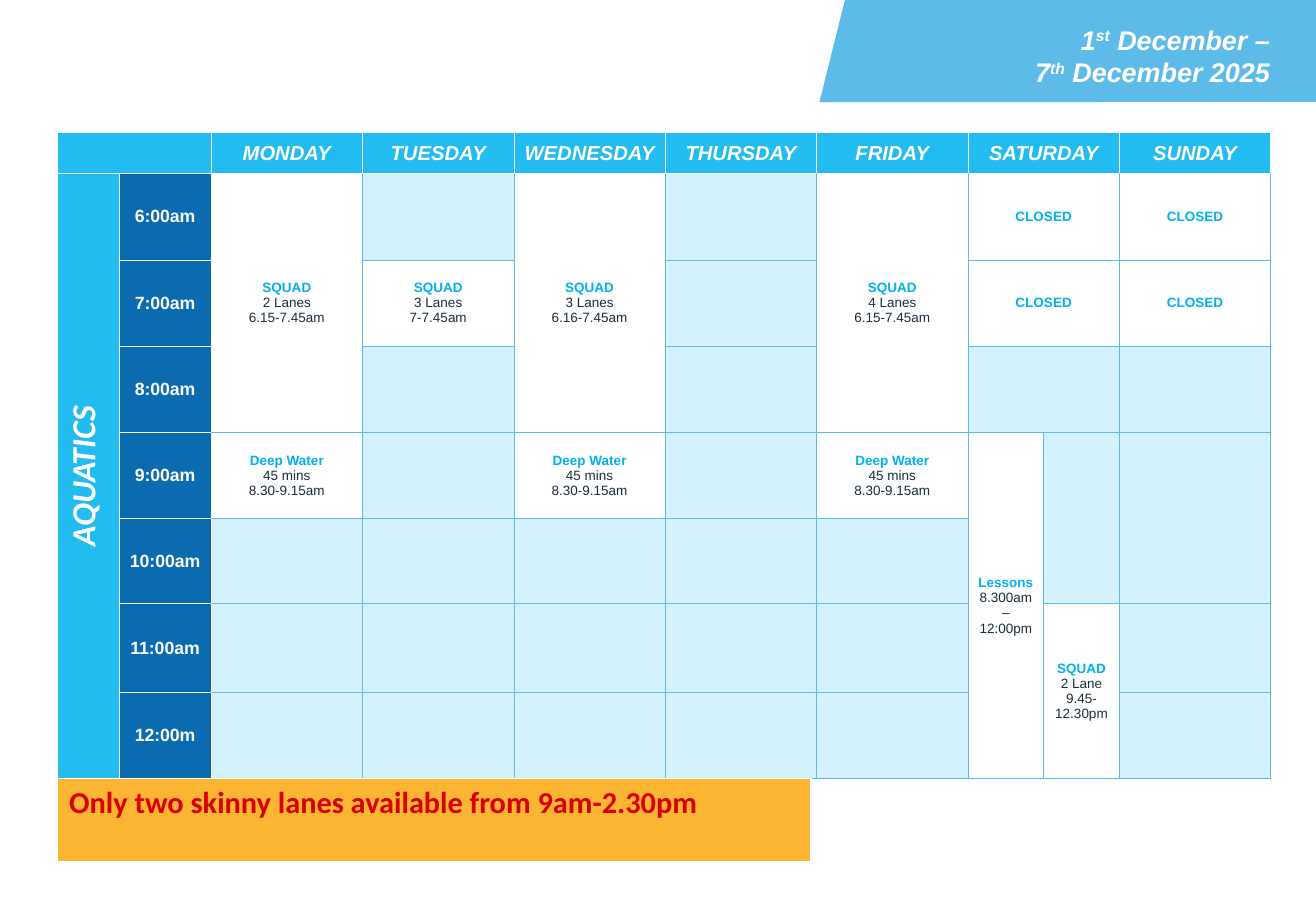
import pptx
import pptx.util
import pptx.dml.color
import pptx.enum.shapes
import pptx.enum.text
from lxml import etree

RGB = pptx.dml.color.RGBColor
ALIGN = pptx.enum.text.PP_ALIGN
ANCHOR = pptx.enum.text.MSO_ANCHOR
SHAPE = pptx.enum.shapes.MSO_SHAPE
inch = pptx.util.Inches

WHITE = RGB(0xFF, 0xFF, 0xFF)
BAND = RGB(0x5D, 0xBB, 0xEA)
CYAN = RGB(0x22, 0xBC, 0xF0)
NAVY = RGB(0x0B, 0x6B, 0xB0)
PALE = RGB(0xD4, 0xF2, 0xFD)
TITLE = RGB(0x00, 0xB0, 0xF0)
INK = RGB(0x1A, 0x2C, 0x3B)
AMBER = RGB(0xFC, 0xB5, 0x33)
RED = RGB(0xD8, 0x00, 0x00)

# Content: (text, is superscript) for each line of the date
DATE_LINES = [
    [("1", False), ("st", True), (" December –", False)],
    [("7", False), ("th", True), (" December 2025", False)],
]
# Day name and first grid column; Saturday has two half columns
DAYS = {"MONDAY": 2, "TUESDAY": 3, "WEDNESDAY": 4, "THURSDAY": 5,
        "FRIDAY": 6, "SATURDAY": 7, "SUNDAY": 9}
TIMES = {"6:00am": 1, "7:00am": 2, "8:00am": 3, "9:00am": 4,
         "10:00am": 5, "11:00am": 7, "12:00m": 8}
# Row, column, row span, column span, title, details
SESSIONS = [
    (1, 2, 3, 1, "SQUAD", ["2 Lanes", "6.15-7.45am"]),
    (2, 3, 1, 1, "SQUAD", ["3 Lanes", "7-7.45am"]),
    (1, 4, 3, 1, "SQUAD", ["3 Lanes", "6.16-7.45am"]),
    (1, 6, 3, 1, "SQUAD", ["4 Lanes", "6.15-7.45am"]),
    (4, 7, 5, 1, "Lessons", ["8.300am – 12:00pm"]),
    (6, 8, 3, 1, "SQUAD", ["2 Lane 9.45-12.30pm"]),
]
SESSIONS += [(4, c, 1, 1, "Deep Water", ["45 mins", "8.30-9.15am"]) for c in (2, 4, 6)]
SESSIONS += [(r, c, 1, w, "CLOSED", []) for r in (1, 2) for c, w in ((7, 2), (9, 1))]
# Empty merged areas: row, column, row span, column span
FREE = [(3, 7, 1, 2), (4, 8, 2, 1), (4, 9, 2, 1), (6, 9, 2, 1)]
FREE += [(5, c, 2, 1) for c in range(2, 7)]
NOTICE = "Only two skinny lanes available from 9am-2.30pm"

# Grid
LEFT, TOP, WIDTH = 0.47, 1.09, 10
SIDE, TIME = 0.51, 0.76
DAY = (WIDTH - SIDE - TIME) / 7
COLS = [SIDE, TIME] + [DAY] * 5 + [DAY / 2] * 2 + [DAY]
ROWS = [0.34] + [0.71] * 4 + [0.7, 0, 0.73, 0.71]


def style(p, size, color, bold=True, italic=False, name="Arial", align=ALIGN.CENTER):
    p.alignment = align
    f = p.font
    f.size, f.name, f.bold, f.italic = pptx.util.Pt(size), name, bold, italic
    f.color.rgb = color


def add_grid(slide, x, y, cols, rows):
    frame = slide.shapes.add_table(len(rows), len(cols), inch(x), inch(y),
                                   inch(sum(cols)), inch(sum(rows)))
    table = frame.table
    table.first_row = table.horz_banding = False
    for col, w in zip(table.columns, cols):
        col.width = inch(w)
    for row, h in zip(table.rows, rows):
        row.height = inch(h)
    return table


def paint(cell, color):
    cell.fill.solid()
    cell.fill.fore_color.rgb = color


def set_borders(cell, edges):
    """edges: (colour, points) for left, right, top, bottom."""
    tcPr = cell._tc.get_or_add_tcPr()
    ns = "{http://schemas.openxmlformats.org/drawingml/2006/main}"
    for i, (side, (color, pts)) in enumerate(zip("LRTB", edges)):
        ln = etree.Element(f"{ns}ln{side}", w=str(pptx.util.Pt(pts)))
        fill = etree.SubElement(ln, f"{ns}solidFill")
        etree.SubElement(fill, f"{ns}srgbClr", val=str(color))
        tcPr.insert(i, ln)


def set_margins(cell, x, y):
    cell.margin_left = cell.margin_right = inch(x)
    cell.margin_top = cell.margin_bottom = inch(y)


def merge(table, r, c, rows, cols):
    cell = table.cell(r, c)
    if rows * cols > 1:
        cell.merge(table.cell(r + rows - 1, c + cols - 1))
    return cell


def label(cell, text, color, size, **font):
    paint(cell, color)
    p = cell.text_frame.paragraphs[0]
    p.text = text
    style(p, size, WHITE, **font)


def add_band(slide, kind, x, w):
    sp = slide.shapes.add_shape(kind, inch(x), 0, inch(w), inch(0.84))
    sp.shadow.inherit = False
    sp.fill.solid()
    sp.fill.fore_color.rgb = BAND
    sp.line.fill.background()


def add_date(slide):
    tf = slide.shapes.add_textbox(inch(6.59), inch(0.19), inch(3.87), inch(0.54)).text_frame
    tf.word_wrap = True
    tf.margin_left = tf.margin_right = tf.margin_top = tf.margin_bottom = 0
    p = tf.paragraphs[0]
    for i, line in enumerate(DATE_LINES):
        if i:
            p.add_line_break()
        for text, raised in line:
            r = p.add_run()
            r.text = text
            if raised:
                r._r.get_or_add_rPr().set("baseline", "30000")
    style(p, 16, WHITE, italic=True, align=ALIGN.RIGHT)


def add_timetable(slide):
    table = add_grid(slide, LEFT, TOP, COLS, ROWS)
    # Base look: white rules around headings, blue rules between sessions
    for r in range(len(ROWS)):
        for c in range(len(COLS)):
            cell = table.cell(r, c)
            cell.vertical_anchor = ANCHOR.MIDDLE
            set_margins(cell, 0.05, 0)
            style(cell.text_frame.paragraphs[0], 8, INK, bold=False)
            paint(cell, PALE)
            heading = r == 0 or c < 2
            white = (heading or c == 2, heading, heading or r == 1, heading)
            set_borders(cell, [(WHITE if w else BAND, 0.5) for w in white])

    # Headings
    paint(merge(table, 0, 0, 1, 2), CYAN)
    for day, c in DAYS.items():
        cell = merge(table, 0, c, 1, 2 if day == "SATURDAY" else 1)
        set_margins(cell, 0.01, 0.02)
        label(cell, day, CYAN, 12, italic=True)
    side = merge(table, 1, 0, len(ROWS) - 1, 1)
    side._tc.get_or_add_tcPr().set("vert", "vert270")
    set_margins(side, 0.04, 0.05)
    label(side, "AQUATICS", CYAN, 20, italic=True, name="Calibri")
    for time, r in TIMES.items():
        label(merge(table, r, 1, 2 if r == 5 else 1, 1), time, NAVY, 10.5)

    # Sessions
    for area in FREE:
        merge(table, *area)
    for *area, title, details in SESSIONS:
        cell = merge(table, *area)
        paint(cell, WHITE)
        tf = cell.text_frame
        tf.text = "\n".join([title] + details)
        for i, p in enumerate(tf.paragraphs):
            style(p, 8, INK if i else TITLE, bold=i == 0)


def add_notice(slide):
    cell = add_grid(slide, LEFT, 6.41, [6.21], [0.7]).cell(0, 0)
    paint(cell, AMBER)
    set_borders(cell, [(WHITE, 1)] * 3 + [(WHITE, 3)])
    p = cell.text_frame.paragraphs[0]
    p.text = NOTICE
    style(p, 18, RED, name="Calibri", align=ALIGN.LEFT)


def main():
    prs = pptx.Presentation()
    prs.slide_width, prs.slide_height = inch(10.84), inch(7.5)
    slide = prs.slides.add_slide(prs.slide_layouts[6])
    add_band(slide, SHAPE.PARALLELOGRAM, 6.75, 2.52)
    add_band(slide, SHAPE.RECTANGLE, 7.28, 3.56)
    add_timetable(slide)
    add_date(slide)
    add_notice(slide)
    prs.save("out.pptx")


if __name__ == "__main__":
    main()
